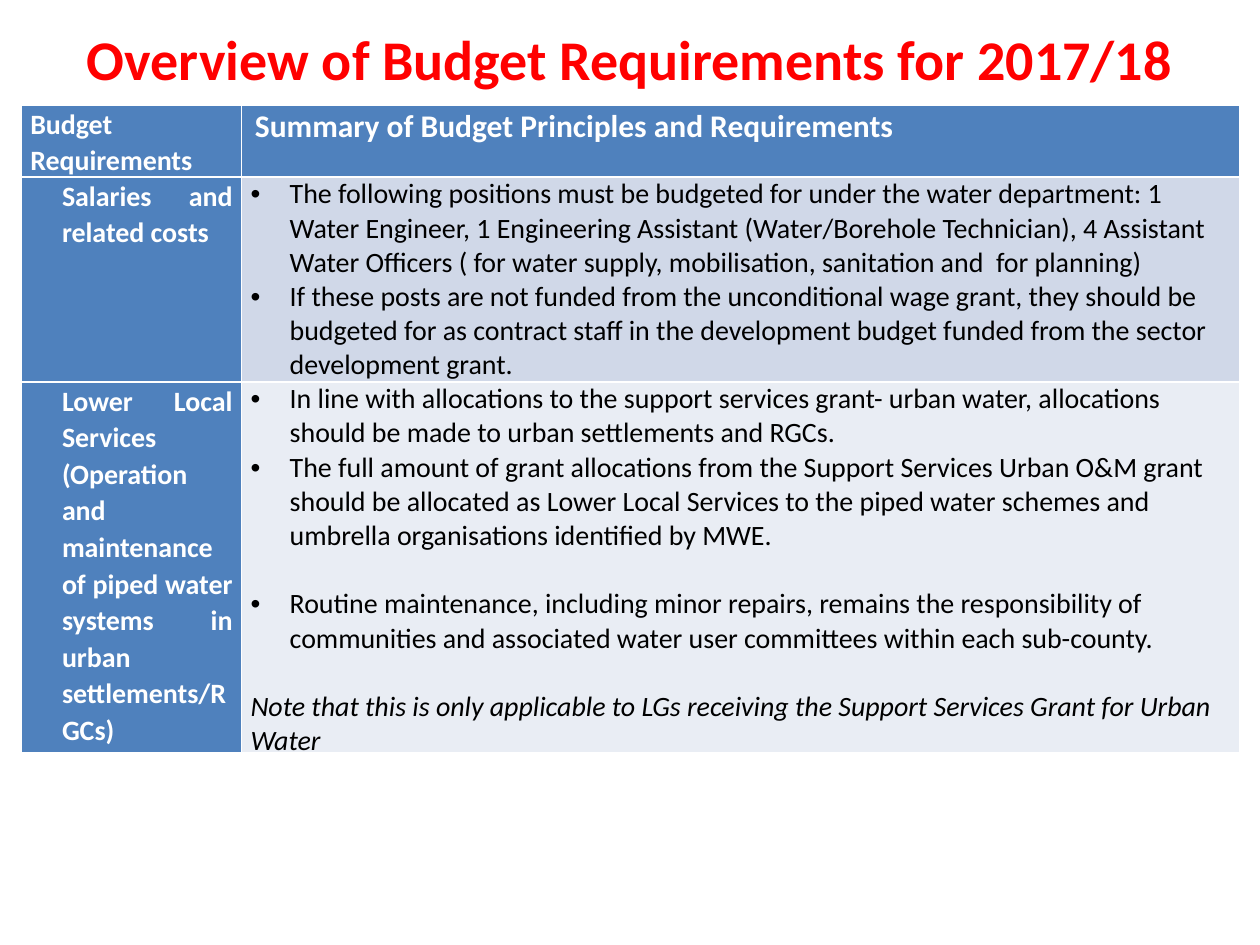
from lxml import etree
from pptx import Presentation
from pptx.dml.color import RGBColor
from pptx.enum.text import MSO_ANCHOR, PP_ALIGN
from pptx.oxml.ns import qn
from pptx.util import Cm, Pt

LEFT, CENTER, JUSTIFY = PP_ALIGN.LEFT, PP_ALIGN.CENTER, PP_ALIGN.JUSTIFY
MIDDLE = MSO_ANCHOR.MIDDLE
RED = RGBColor(0xFF, 0x00, 0x00)
WHITE = RGBColor(0xFF, 0xFF, 0xFF)
BLACK = RGBColor(0x00, 0x00, 0x00)
BLUE = RGBColor(0x4F, 0x81, 0xBD)
BAND_DARK = RGBColor(0xD0, 0xD8, 0xE8)
BAND_LIGHT = RGBColor(0xE9, 0xED, 0xF4)
FONT = "Calibri"
LINE_GAP = 19.5

TITLE = "Overview of Budget Requirements for 2017/18"
HEADERS = [
    ("Budget Requirements", 16, 0),
    ("Summary of Budget Principles and Requirements", 18, 0.09),
]
ROWS = [
    ("Salaries and related costs", BAND_DARK, [
        ("The following positions must be budgeted for under the water department: "
         "1 Water Engineer, 1 Engineering Assistant (Water/Borehole Technician), "
         "4 Assistant Water Officers ( for water supply, mobilisation, sanitation "
         "and  for planning)", "bullet", 0),
        ("If these posts are not funded from the unconditional wage grant, they should "
         "be budgeted for as contract staff in the development budget funded from the "
         "sector development grant.", "bullet", 0),
    ]),
    ("Lower Local Services (Operation and maintenance of piped water systems in urban "
     "settlements/RGCs)", BAND_LIGHT, [
        ("In line with allocations to the support services grant- urban water, "
         "allocations should be made to urban settlements and RGCs.", "bullet", 0),
        ("The full amount of grant allocations from the Support Services Urban O&M "
         "grant should be allocated as Lower Local Services to the piped water schemes "
         "and umbrella organisations identified by MWE.", "bullet", 0),
        ("Routine maintenance, including minor repairs, remains the responsibility of "
         "communities and associated water user committees within each sub-county.",
         "bullet", LINE_GAP),
        ("Note that this is only applicable to LGs receiving the Support Services Grant "
         "for Urban Water", "note", LINE_GAP),
    ]),
]
COLUMN_WIDTHS = [4.44, 20.12]
ROW_HEIGHTS = [1.45, 4.13, 7.4]


def write(paragraph, text, size, color, bold=False, italic=False, align=LEFT):
    paragraph.alignment = align
    run = paragraph.add_run()
    run.text = text
    font = run.font
    font.name, font.size = FONT, Pt(size)
    font.bold, font.italic = bold, italic
    font.color.rgb = color


def indent(paragraph, margin, first=0.0, bullet=False):
    properties = paragraph._p.get_or_add_pPr()
    properties.set("marL", str(Cm(margin)))
    properties.set("indent", str(Cm(first)))
    if bullet:
        etree.SubElement(properties, qn("a:buFont")).set("typeface", "Arial")
        etree.SubElement(properties, qn("a:buChar")).set("char", "•")


def prepare(cell, color):
    cell.fill.solid()
    cell.fill.fore_color.rgb = color
    cell.margin_left = cell.margin_right = Cm(0.18)
    cell.margin_top = cell.margin_bottom = Cm(0)
    return cell.text_frame


def write_label(cell, text, size, margin, align=LEFT):
    paragraph = prepare(cell, BLUE).paragraphs[0]
    write(paragraph, text, size, WHITE, bold=True, align=align)
    paragraph.line_spacing = 1.07
    indent(paragraph, margin)


def write_details(cell, color, details):
    frame = prepare(cell, color)
    for index, (text, kind, gap) in enumerate(details):
        paragraph = frame.add_paragraph() if index else frame.paragraphs[0]
        write(paragraph, text, 16, BLACK, italic=kind == "note")
        paragraph.space_before = Pt(gap)
        if kind == "bullet":
            indent(paragraph, 0.79, -0.79, bullet=True)


def add_title(slide):
    box = slide.shapes.add_textbox(Cm(1.27), Cm(0), Cm(22.86), Cm(2.34))
    frame = box.text_frame
    frame.word_wrap = True
    frame.vertical_anchor = MIDDLE
    write(frame.paragraphs[0], TITLE, 32, RED, bold=True, align=CENTER)


def add_requirements(slide):
    table = slide.shapes.add_table(
        len(ROW_HEIGHTS), len(COLUMN_WIDTHS), Cm(0.43), Cm(2.12),
        Cm(sum(COLUMN_WIDTHS)), Cm(sum(ROW_HEIGHTS))).table
    for column, width in zip(table.columns, COLUMN_WIDTHS):
        column.width = Cm(width)
    for row, height in zip(table.rows, ROW_HEIGHTS):
        row.height = Cm(height)
    for index, (text, size, margin) in enumerate(HEADERS):
        write_label(table.cell(0, index), text, size, margin)
    for index, (label, color, details) in enumerate(ROWS, start=1):
        write_label(table.cell(index, 0), label, 16, 0.64, JUSTIFY)
        write_details(table.cell(index, 1), color, details)


def main():
    presentation = Presentation()
    presentation.slide_width, presentation.slide_height = Cm(25.4), Cm(19.05)
    slide = presentation.slides.add_slide(presentation.slide_layouts[6])
    add_title(slide)
    add_requirements(slide)
    presentation.save("out.pptx")


if __name__ == "__main__":
    main()
